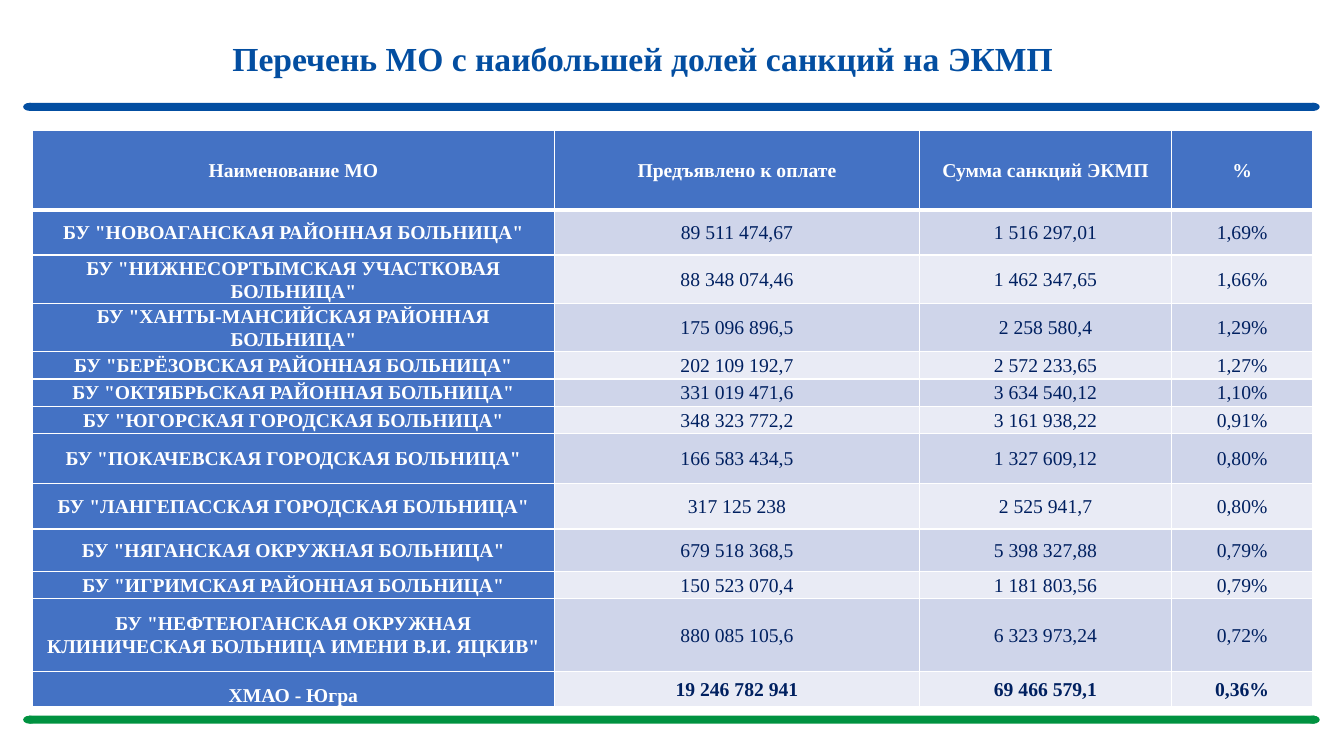
import pptx
import pptx.util
import pptx.dml.color
import pptx.enum.shapes
import pptx.enum.text
import pptx.oxml
import pptx.oxml.ns

Inches = pptx.util.Inches
Pt = pptx.util.Pt
SHAPES = pptx.enum.shapes.MSO_SHAPE
ANCHOR = pptx.enum.text.MSO_ANCHOR

COLORS = {
    "blue": "034EA1",
    "green": "009240",
    "header": "4472C4",
    "dark_band": "CFD5EA",
    "light_band": "E9EBF5",
    "navy": "002060",
    "white": "FFFFFF",
}
COLUMN_WIDTHS = [5.18, 3.62, 2.5, 1.4]
ROW_HEIGHTS = [0.79, 0.45, 0.48, 0.48, 0.27, 0.27, 0.27, 0.5, 0.45, 0.42, 0.27, 0.72, 0.35]
ROWS = [
    ("Наименование МО", "Предъявлено к оплате", "Сумма санкций ЭКМП", "%"),
    ('БУ "НОВОАГАНСКАЯ РАЙОННАЯ БОЛЬНИЦА"', "89 511 474,67", "1 516 297,01", "1,69%"),
    ('БУ "НИЖНЕСОРТЫМСКАЯ УЧАСТКОВАЯ БОЛЬНИЦА"', "88 348 074,46", "1 462 347,65", "1,66%"),
    ('БУ "ХАНТЫ-МАНСИЙСКАЯ РАЙОННАЯ БОЛЬНИЦА"', "175 096 896,5", "2 258 580,4", "1,29%"),
    ('БУ "БЕРЁЗОВСКАЯ РАЙОННАЯ БОЛЬНИЦА"', "202 109 192,7", "2 572 233,65", "1,27%"),
    ('БУ "ОКТЯБРЬСКАЯ РАЙОННАЯ БОЛЬНИЦА"', "331 019 471,6", "3 634 540,12", "1,10%"),
    ('БУ "ЮГОРСКАЯ ГОРОДСКАЯ БОЛЬНИЦА"', "348 323 772,2", "3 161 938,22", "0,91%"),
    ('БУ "ПОКАЧЕВСКАЯ ГОРОДСКАЯ БОЛЬНИЦА"', "166 583 434,5", "1 327 609,12", "0,80%"),
    ('БУ "ЛАНГЕПАССКАЯ ГОРОДСКАЯ БОЛЬНИЦА"', "317 125 238", "2 525 941,7", "0,80%"),
    ('БУ "НЯГАНСКАЯ ОКРУЖНАЯ БОЛЬНИЦА"', "679 518 368,5", "5 398 327,88", "0,79%"),
    ('БУ "ИГРИМСКАЯ РАЙОННАЯ БОЛЬНИЦА"', "150 523 070,4", "1 181 803,56", "0,79%"),
    ('БУ "НЕФТЕЮГАНСКАЯ ОКРУЖНАЯ КЛИНИЧЕСКАЯ БОЛЬНИЦА ИМЕНИ В.И. ЯЦКИВ"',
     "880 085 105,6", "6 323 973,24", "0,72%"),
    ("ХМАО - Югра", "19 246 782 941", "69 466 579,1", "0,36%"),
]


def write_text(frame, text, size, color, bold):
    para = frame.paragraphs[0]
    para.alignment = pptx.enum.text.PP_ALIGN.CENTER
    para.line_spacing = 1.07
    span = para.add_run()
    span.text = text
    span.font.name = "Times New Roman"
    span.font.size = Pt(size)
    span.font.bold = bold
    span.font.color.rgb = pptx.dml.color.RGBColor.from_string(COLORS[color])
    return para


def add_border(cell, side, width):
    cell._tc.get_or_add_tcPr().append(pptx.oxml.parse_xml(
        f'<a:{side} {pptx.oxml.ns.nsdecls("a")} w="{Pt(width)}"><a:solidFill>'
        f'<a:srgbClr val="{COLORS["white"]}"/></a:solidFill></a:{side}>'))


deck = pptx.Presentation()
deck.slide_width = Inches(13.33)
deck.slide_height = Inches(7.5)
page = deck.slides.add_slide(deck.slide_layouts[5])

for bar_top, bar_color in ((1.02, "blue"), (7.1, "green")):
    for kind, left, width in (
        (SHAPES.RECTANGLE, 0.29, 12.75),
        (SHAPES.OVAL, 0.23, 0.13),
        (SHAPES.OVAL, 12.96, 0.13),
    ):
        bar_part = page.shapes.add_shape(
            kind, Inches(left), Inches(bar_top), Inches(width), Inches(0.08))
        bar_part.shadow.inherit = False
        bar_part.fill.solid()
        bar_part.fill.fore_color.rgb = pptx.dml.color.RGBColor.from_string(COLORS[bar_color])
        bar_part.line.fill.background()

title = page.shapes.title
title.left, title.top = Inches(0.49), Inches(0.13)
title.width, title.height = Inches(11.28), Inches(1.08)
title_frame = title.text_frame
title_frame.word_wrap = True
title_frame.auto_size = pptx.enum.text.MSO_AUTO_SIZE.NONE
title_frame.vertical_anchor = ANCHOR.BOTTOM
title_frame.margin_bottom = Inches(0.43)
title_para = write_text(
    title_frame, "Перечень МО с наибольшей долей санкций на ЭКМП", 24, "blue", True)
title_para.space_after = Pt(8)
title_para._p.get_or_add_pPr().set("indent", str(Inches(0.49)))

table = page.shapes.add_table(
    len(ROWS), len(COLUMN_WIDTHS), Inches(0.32), Inches(1.29),
    Inches(sum(COLUMN_WIDTHS)), Inches(sum(ROW_HEIGHTS))).table
for column, width in zip(table.columns, COLUMN_WIDTHS):
    column.width = Inches(width)

last_row = len(ROWS) - 1
for row_index, values in enumerate(ROWS):
    table.rows[row_index].height = Inches(ROW_HEIGHTS[row_index])
    for column_index, value in enumerate(values):
        cell = table.cell(row_index, column_index)
        is_heading = row_index == 0 or column_index == 0
        is_total_name = row_index == last_row and column_index == 0
        for side in ("lnL", "lnR", "lnT", "lnB"):
            thick = (row_index, side) in ((0, "lnB"), (1, "lnT"))
            add_border(cell, side, 3 if thick else 1)
        band = "dark_band" if row_index % 2 else "light_band"
        cell.fill.solid()
        cell.fill.fore_color.rgb = pptx.dml.color.RGBColor.from_string(
            COLORS["header" if is_heading else band])
        cell.margin_left = cell.margin_right = Inches(0.07)
        cell.margin_top = cell.margin_bottom = 0
        cell.vertical_anchor = ANCHOR.BOTTOM if is_total_name else ANCHOR.MIDDLE
        write_text(cell.text_frame, value, 14, "white" if is_heading else "navy",
                   is_heading or row_index == last_row)

deck.save("out.pptx")
